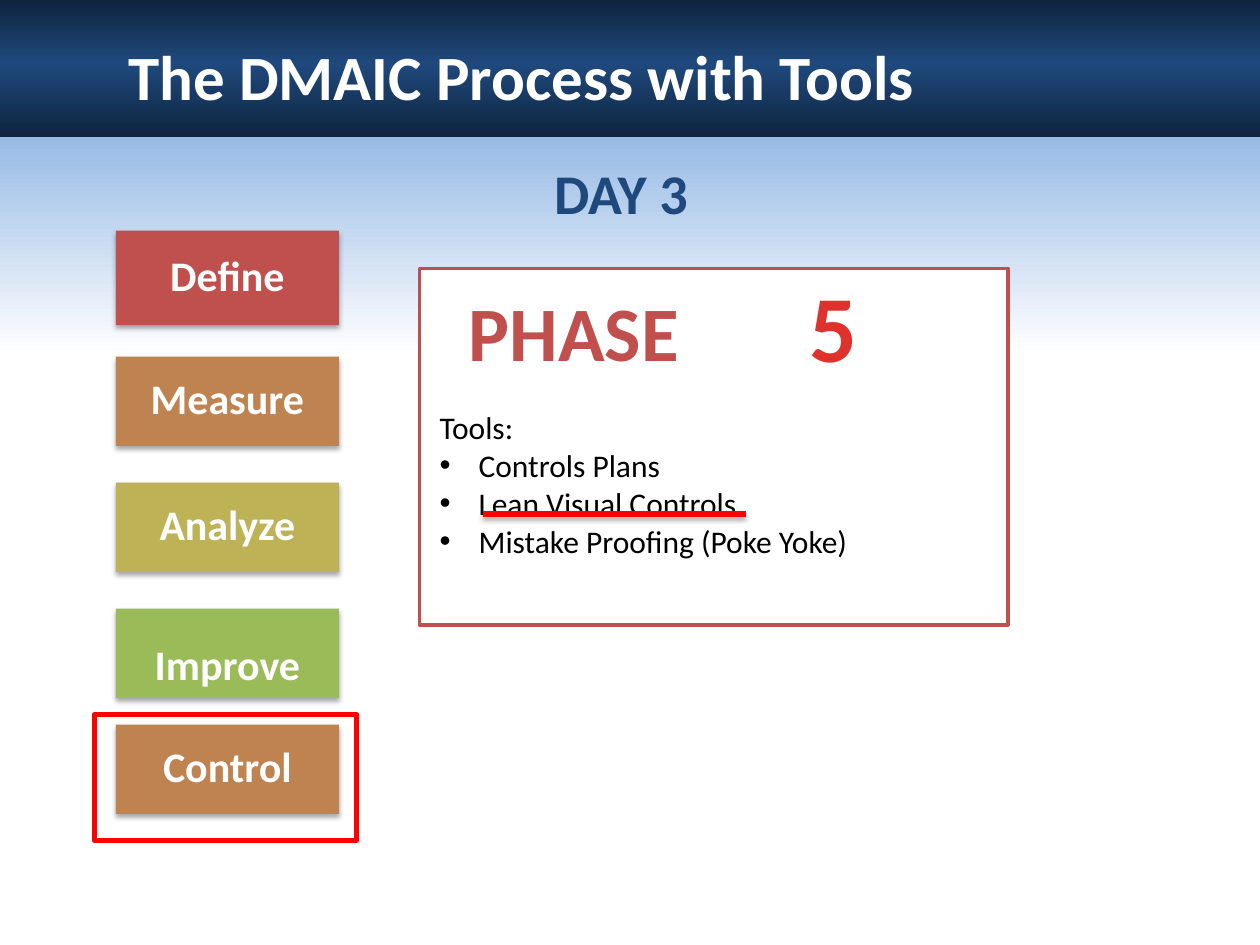
from dataclasses import dataclass

from lxml import etree
from pptx import Presentation
from pptx.dml.color import RGBColor
from pptx.enum.shapes import MSO_CONNECTOR, MSO_SHAPE
from pptx.enum.text import MSO_ANCHOR, PP_ALIGN
from pptx.oxml import parse_xml
from pptx.oxml.ns import nsdecls, qn
from pptx.util import Inches, Pt

RECT = MSO_SHAPE.RECTANGLE
LINE = MSO_CONNECTOR.STRAIGHT
TOP, MIDDLE = MSO_ANCHOR.TOP, MSO_ANCHOR.MIDDLE
LEFT, CENTER = PP_ALIGN.LEFT, PP_ALIGN.CENTER


@dataclass(frozen=True)
class Theme:
    font: str = "Calibri"
    white: str = "FFFFFF"
    black: str = "000000"
    night: str = "0F243E"
    navy: str = "1F497D"
    sky: str = "8EB4E3"
    brick: str = "C0504D"
    tan: str = "BE8351"
    olive: str = "BDB255"
    green: str = "9BBB59"
    mark: str = "FF0000"
    digit: str = "E0322D"
    body: int = 18
    step: int = 24
    day: int = 32
    title: int = 36
    phase: int = 44
    number: int = 54


T = Theme()


def add_rect(slide, box, fill=None, line=None, width=0):
    shape = slide.shapes.add_shape(RECT, *map(Inches, box))
    shape.shadow.inherit = False
    if fill:
        shape.fill.solid()
        shape.fill.fore_color.rgb = RGBColor.from_string(fill)
    else:
        shape.fill.background()
    if line:
        shape.line.color.rgb = RGBColor.from_string(line)
        shape.line.width = Pt(width)
    else:
        shape.line.fill.background()
    return shape


def add_fade(slide, box, stops):
    """Add a rectangle with a gradient running from top to bottom."""
    shape = add_rect(slide, box)
    marks = "".join(
        f'<a:gs pos="{pos * 1000}"><a:srgbClr val="{color}"/></a:gs>'
        for pos, color in stops)
    fade = parse_xml(
        f'<a:gradFill {nsdecls("a")} rotWithShape="1"><a:gsLst>{marks}</a:gsLst>'
        '<a:lin ang="5400000" scaled="0"/></a:gradFill>')
    props = shape.fill._xPr
    props.replace(props.find(qn("a:noFill")), fade)


def add_shadow(shape):
    props = shape._element.spPr
    for old in props.findall(qn("a:effectLst")):
        props.remove(old)
    props.append(parse_xml(
        f'<a:effectLst {nsdecls("a")}>'
        '<a:outerShdw blurRad="39370" dist="22860" dir="5400000" rotWithShape="0">'
        f'<a:srgbClr val="{T.black}"><a:alpha val="35000"/></a:srgbClr>'
        '</a:outerShdw></a:effectLst>'))


def set_text(frame, text, size, color, bold=True, align=LEFT):
    frame.text = text
    for para in frame.paragraphs:
        para.alignment = align
        for run in para.runs:
            font = run.font
            font.name, font.size, font.bold = T.font, Pt(size), bold
            font.color.rgb = RGBColor.from_string(color)


def add_text(slide, box, text, size, color, wrap=True, **style):
    frame = slide.shapes.add_textbox(*map(Inches, box)).text_frame
    frame.word_wrap = wrap
    frame.vertical_anchor = TOP
    set_text(frame, text, size, color, **style)
    return frame


def add_bullet(para):
    props = para._p.get_or_add_pPr()
    props.set("marL", str(Inches(0.31)))
    props.set("indent", str(Inches(-0.31)))
    etree.SubElement(props, qn("a:buFont")).set("typeface", "Arial")
    etree.SubElement(props, qn("a:buChar")).set("char", "•")


def add_step(slide, top, high, name, color, pad):
    shape = add_rect(slide, (0.92, top, 1.77, high), color)
    add_shadow(shape)
    frame = shape.text_frame
    frame.margin_left = frame.margin_right = Inches(0.23)
    frame.margin_top, frame.margin_bottom = map(Inches, pad)
    frame.vertical_anchor = MIDDLE
    set_text(frame, name, T.step, T.white, align=CENTER)
    frame.paragraphs[0].line_spacing = 0.9


def add_steps(slide):
    even, low = (0.13, 0.13), (0.22, 0)
    steps = [("Define", T.brick, 0.75, even), ("Measure", T.tan, 0.71, even),
             ("Analyze", T.olive, 0.71, even), ("Improve", T.green, 0.71, low),
             ("Control", T.tan, 0.71, even)]
    for i, (name, color, high, pad) in enumerate(steps):
        top = 1.83 + i if name != "Control" else 5.75
        add_step(slide, top, high, name, color, pad)


def add_phase(slide):
    add_rect(slide, (3.33, 2.13, 4.67, 2.83), T.white, T.brick, 2)
    add_text(slide, (6.3, 2.08, 0.63, 1.01), "5", T.number, T.digit,
             wrap=False, align=CENTER)
    add_text(slide, (3.39, 2.21, 2.33, 0.84), "PHASE", T.phase, T.brick,
             wrap=False, align=CENTER)
    tools = ["Tools:", "Controls Plans", "Lean Visual Controls",
             "Mistake Proofing (Poke Yoke)"]
    frame = add_text(slide, (3.39, 3.19, 4.52, 2.22), "\n".join(tools),
                     T.body, T.black, bold=False)
    for para in frame.paragraphs[1:]:
        add_bullet(para)


def add_rule(slide, left, right, y):
    rule = slide.shapes.add_connector(
        LINE, Inches(left), Inches(y), Inches(right), Inches(y))
    rule.line.color.rgb = RGBColor.from_string(T.mark)
    rule.line.width = Pt(3)
    add_shadow(rule)


def main():
    deck = Presentation()
    deck.slide_width, deck.slide_height = Inches(10), Inches(7.5)
    slide = deck.slides.add_slide(deck.slide_layouts[6])

    # Backdrop and title band
    add_fade(slide, (0, 0.92, 10, 6.54),
             [(0, T.sky), (29, T.white), (100, T.white)])
    add_fade(slide, (0, 0, 10, 1.09),
             [(0, T.night), (46, T.navy), (100, T.night)])

    # Process steps and the current phase
    add_steps(slide)
    add_phase(slide)

    # Headings
    add_text(slide, (0.92, 0.25, 8.5, 0.64), "The DMAIC Process with Tools",
             T.title, T.white)
    add_text(slide, (4.3, 1.21, 1.47, 0.64), "DAY 3", T.day, T.navy, wrap=False)

    # Red marks
    add_rect(slide, (0.75, 5.67, 2.08, 1), line=T.mark, width=3)
    add_rule(slide, 3.83, 5.92, 4.08)

    deck.save("out.pptx")


if __name__ == "__main__":
    main()
